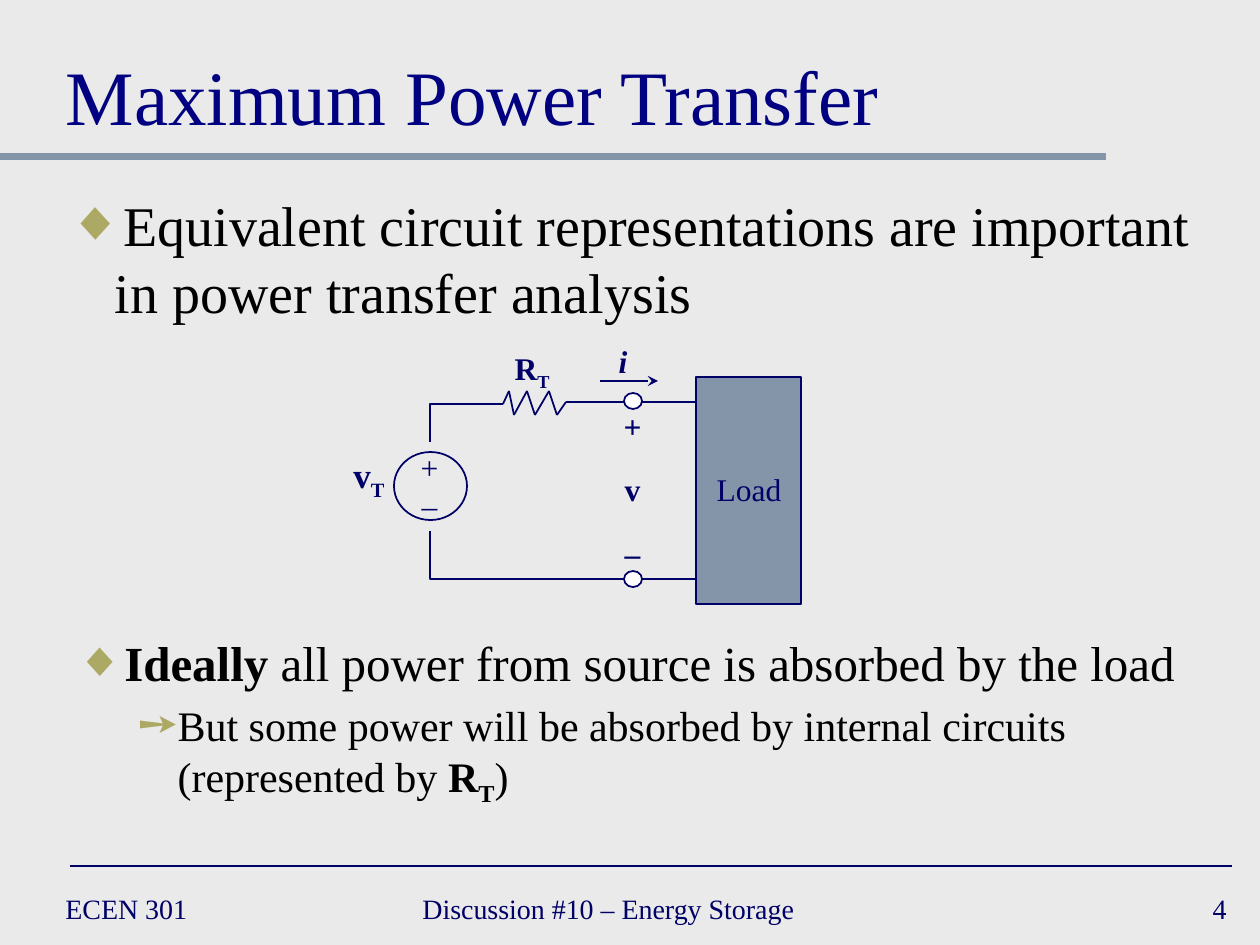
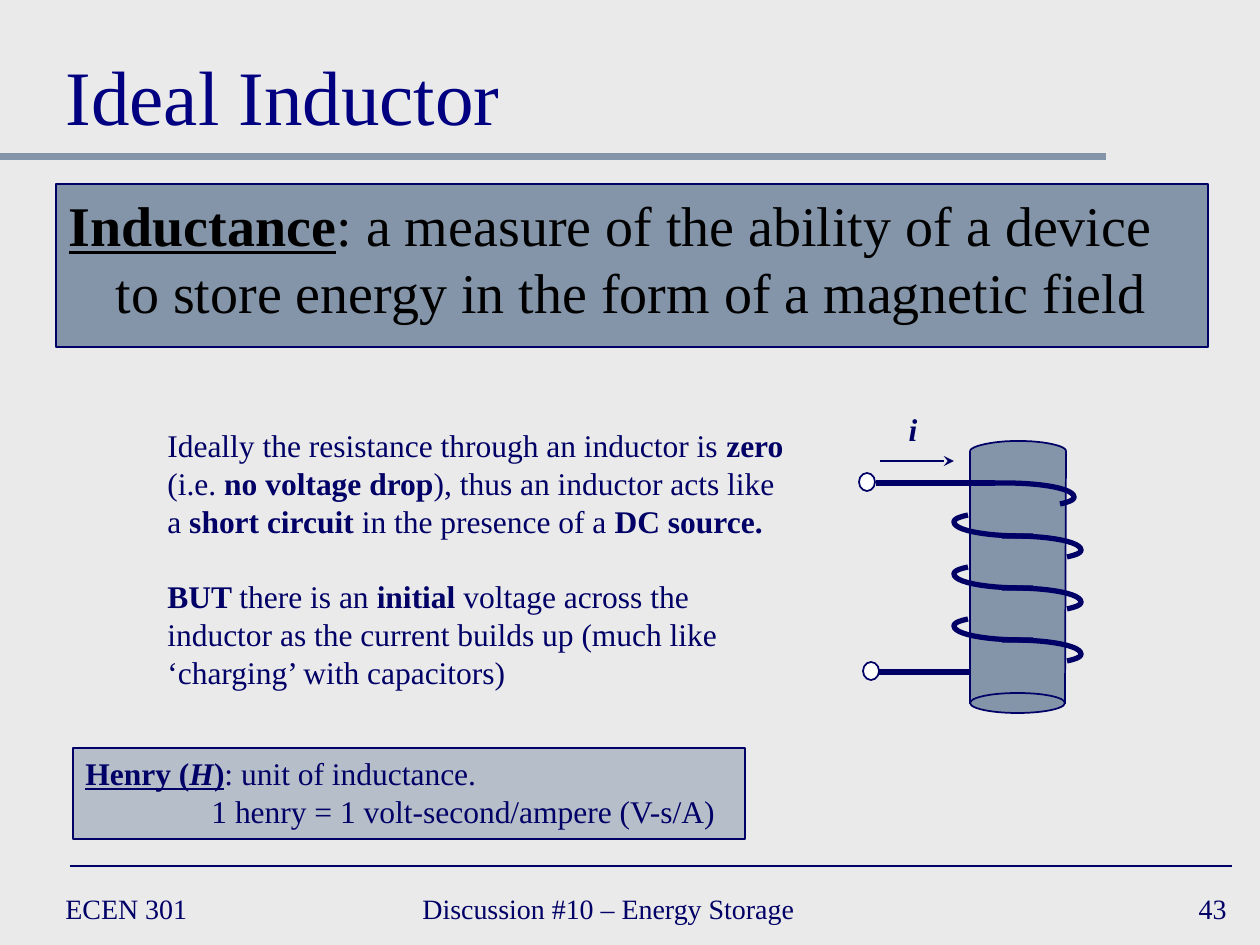
from dataclasses import dataclass
from itertools import pairwise
from typing import NamedTuple

from lxml import etree
from pptx import Presentation
from pptx.dml.color import RGBColor
from pptx.enum.dml import MSO_FILL
from pptx.enum.shapes import MSO_CONNECTOR, MSO_SHAPE
from pptx.enum.text import MSO_ANCHOR, MSO_AUTO_SIZE, PP_ALIGN
from pptx.oxml.ns import qn
from pptx.util import Emu, Pt

LEFT, CENTER, RIGHT = PP_ALIGN.LEFT, PP_ALIGN.CENTER, PP_ALIGN.RIGHT
TOP, MIDDLE, BOTTOM = MSO_ANCHOR.TOP, MSO_ANCHOR.MIDDLE, MSO_ANCHOR.BOTTOM
NO_AUTOFIT = MSO_AUTO_SIZE.NONE
STRAIGHT = MSO_CONNECTOR.STRAIGHT
RECTANGLE, OVAL = MSO_SHAPE.RECTANGLE, MSO_SHAPE.OVAL
SOLID = MSO_FILL.SOLID
EMU_PER_PX = 914400 / 126
CURVE_STEPS = 12

Point = tuple[float, float]


@dataclass(frozen=True)
class Theme:
    font: str = "Times New Roman"
    background: RGBColor = RGBColor(0xEA, 0xEA, 0xEA)
    steel: RGBColor = RGBColor(0x84, 0x95, 0xA9)
    navy: RGBColor = RGBColor(0x00, 0x00, 0x66)
    title: RGBColor = RGBColor(0x00, 0x00, 0x80)
    body: RGBColor = RGBColor(0x00, 0x00, 0x00)
    bullet: RGBColor = RGBColor(0xAC, 0xA9, 0x64)
    white: RGBColor = RGBColor(0xFF, 0xFF, 0xFF)
    title_size: int = 44
    lead_size: int = 32
    point_size: int = 28
    detail_size: int = 24
    source_size: int = 20
    label_size: int = 18
    footer_size: int = 16
    thin: float = 1
    hairline: float = 0.75
    coil: float = 3
    band: float = 4


THEME = Theme()


class Frame(NamedTuple):
    left: int
    top: int
    width: int
    height: int


class Span(NamedTuple):
    text: str
    bold: bool = False
    italic: bool = False
    underline: bool = False
    subscript: bool = False


class Para(NamedTuple):
    spans: list[Span]
    size: int = THEME.label_size
    color: RGBColor = THEME.navy
    align: PP_ALIGN = LEFT
    before: float = 0
    indent: int = 0
    hanging: int = 0
    level: int = 0
    bullet: str = ""


class Footer(NamedTuple):
    frame: Frame
    text: str
    align: PP_ALIGN = LEFT


def px(length: float) -> Emu:
    return Emu(round(length * EMU_PER_PX))


def place(shape, frame: Frame) -> None:
    shape.left, shape.top, shape.width, shape.height = map(px, frame)


def set_bullet(properties, mark: str) -> None:
    if not mark:
        etree.SubElement(properties, qn("a:buNone"))
        return
    color = etree.SubElement(properties, qn("a:buClr"))
    etree.SubElement(color, qn("a:srgbClr"), val=str(THEME.bullet))
    etree.SubElement(properties, qn("a:buFont"), typeface=THEME.font)
    etree.SubElement(properties, qn("a:buChar"), char=mark)


def write(shape, paras: list[Para], wrap: bool = True, anchor: MSO_ANCHOR = TOP) -> None:
    frame = shape.text_frame
    frame.auto_size = NO_AUTOFIT
    frame.word_wrap = wrap
    frame.vertical_anchor = anchor
    for index, para in enumerate(paras):
        paragraph = frame.add_paragraph() if index else frame.paragraphs[0]
        properties = paragraph._p.get_or_add_pPr()
        properties.set("marL", str(px(para.indent)))
        properties.set("indent", str(px(-para.hanging)))
        set_bullet(properties, para.bullet)
        paragraph.level = para.level
        paragraph.alignment = para.align
        paragraph.space_before = Pt(para.before)
        for span in para.spans:
            run = paragraph.add_run()
            run.text = span.text
            run.font.name = THEME.font
            run.font.size = Pt(para.size)
            run.font.color.rgb = para.color
            run.font.bold = span.bold
            run.font.italic = span.italic
            run.font.underline = span.underline
            if span.subscript:
                run._r.get_or_add_rPr().set("baseline", "-25000")


def add_text(page, frame: Frame, paras: list[Para], wrap: bool = True,
             anchor: MSO_ANCHOR = TOP) -> None:
    write(page.shapes.add_textbox(*map(px, frame)), paras, wrap, anchor)


def add_label(page, frame: Frame, *spans: Span, size: int = THEME.label_size) -> None:
    add_text(page, frame, [Para(list(spans), size, align=CENTER)], wrap=False)


def paint(shape, fill: RGBColor | None, line: RGBColor | None,
          width: float = THEME.thin) -> None:
    if fill is None:
        shape.fill.background()
    else:
        shape.fill.solid()
        shape.fill.fore_color.rgb = fill
    if line is None:
        shape.line.fill.background()
    else:
        shape.line.color.rgb = line
        shape.line.width = Pt(width)


def add_solid(page, kind: MSO_SHAPE, frame: Frame, fill: RGBColor | None,
              line: RGBColor | None = THEME.navy):
    shape = page.shapes.add_shape(kind, *map(px, frame))
    shape.shadow.inherit = False
    paint(shape, fill, line)
    return shape


def add_line(page, start: Point, end: Point, color: RGBColor = THEME.navy,
             width: float = THEME.thin, arrow: bool = False) -> None:
    line = page.shapes.add_connector(STRAIGHT, *map(px, (*start, *end)))
    line.line.color.rgb = color
    line.line.width = Pt(width)
    if arrow:
        etree.SubElement(line.line._get_or_add_ln(), qn("a:tailEnd"), type="stealth")
    etree.SubElement(line._element.spPr, qn("a:effectLst"))


def add_path(page, points: list[Point], width: float = THEME.thin) -> None:
    corners = [(px(x), px(y)) for x, y in points]
    builder = page.shapes.build_freeform(*corners[0])
    builder.add_line_segments(corners[1:], close=False)
    shape = builder.convert_to_shape()
    shape.shadow.inherit = False
    paint(shape, None, THEME.navy, width)


def curve(start: Point, first: Point, second: Point, end: Point) -> list[Point]:
    points = []
    for step in range(CURVE_STEPS + 1):
        t = step / CURVE_STEPS
        weights = ((1 - t) ** 3, 3 * t * (1 - t) ** 2, 3 * t * t * (1 - t), t ** 3)
        corners = (start, first, second, end)
        points.append((sum(w * c[0] for w, c in zip(weights, corners)),
                       sum(w * c[1] for w, c in zip(weights, corners))))
    return points


HALF_TURN = [(0, 0), *curve((11, 0), (49, 0), (79, 6), (79, 14)),
             *curve((79, 14), (79, 17), (74, 19), (65, 21))]
RIM = [*curve((970, 451), (971, 446), (993, 441), (1018, 441)),
       *curve((1018, 441), (1045, 441), (1066, 446), (1066, 451))]


def add_half_turn(page, x: int, y: int, direction: int) -> None:
    add_path(page, [(x + direction * dx, y + direction * dy) for dx, dy in HALF_TURN],
             THEME.coil)


def add_page(deck, layout: int, title: str, number: str):
    page = deck.slides.add_slide(deck.slide_layouts[layout])
    add_line(page, (0, 157), (1106, 157), THEME.steel, THEME.band)
    add_line(page, (70, 866), (1232, 866))
    place(page.shapes.title, Frame(53, 21, 1155, 126))
    write(page.shapes.title, [Para([Span(title)], THEME.title_size, THEME.title)],
          anchor=BOTTOM)
    footers = [
        Footer(Frame(53, 882, 273, 53), "ECEN 301"),
        Footer(Frame(410, 882, 483, 53), "Discussion #10 – Energy Storage"),
        Footer(Frame(977, 882, 262, 53), number, RIGHT),
    ]
    for footer in footers:
        para = Para([Span(footer.text)], THEME.footer_size, align=footer.align)
        add_text(page, footer.frame, [para], anchor=MIDDLE)
    return page


def fill_body(page, index: int, frame: Frame, paras: list[Para]):
    body = page.placeholders[index]
    place(body, frame)
    write(body, paras)
    return body


def add_circuit(page) -> None:
    add_label(page, Frame(340, 447, 58, 54), Span("v", True),
              Span("T", True, subscript=True), size=THEME.source_size)
    add_solid(page, OVAL, Frame(394, 452, 73, 68), None)
    add_text(page, Frame(408, 442, 43, 88),
             [Para([Span(sign)], align=CENTER) for sign in "+–"], wrap=False)
    for top in (393, 571):
        add_solid(page, OVAL, Frame(624, top, 18, 16), THEME.white)
    resistor = [(503, 404), (509, 391), (514, 415), (527, 391), (535, 415),
                (549, 391), (557, 415), (566, 402), (624, 402)]
    for start, end in pairwise(resistor):
        add_line(page, start, end)
    add_label(page, Frame(501, 343, 62, 50), Span("R", True),
              Span("T", True, subscript=True))
    add_path(page, [(430, 531), (430, 579), (624, 579)])
    add_path(page, [(430, 442), (430, 404), (503, 404)])
    for y in (402, 579):
        add_line(page, (642, y), (695, y))
    add_solid(page, RECTANGLE, Frame(696, 377, 105, 227), THEME.steel)
    add_label(page, Frame(704, 464, 90, 50), Span("Load"))
    add_text(page, Frame(611, 401, 43, 176),
             [Para([Span(mark, True)], align=CENTER, before=14.5 if index else 0)
              for index, mark in enumerate("+v–")], wrap=False)
    add_line(page, (600, 381), (658, 381), arrow=True)
    add_label(page, Frame(606, 336, 34, 50), Span("i", True, True))


def add_inductor(page) -> None:
    add_solid(page, RECTANGLE, Frame(970, 451, 95, 248), THEME.steel, None)
    add_half_turn(page, 995, 483, 1)
    for turn in range(3):
        y = 536 + 52 * turn
        add_half_turn(page, 1033, y, -1)
        add_half_turn(page, 1002, y, 1)
    add_line(page, (995, 483), (876, 483), width=THEME.coil)
    add_line(page, (970, 672), (876, 672), width=THEME.coil)
    for left, top in ((859, 473), (863, 662)):
        add_solid(page, OVAL, Frame(left, top, 16, 18), THEME.white)
    add_solid(page, OVAL, Frame(970, 693, 95, 20), THEME.steel)
    add_solid(page, OVAL, Frame(971, 441, 95, 20), THEME.steel, None)
    add_path(page, RIM)
    add_line(page, (970, 451), (970, 704))
    add_line(page, (1065, 704), (1066, 451))
    add_line(page, (880, 461), (954, 461), arrow=True)
    add_label(page, Frame(896, 404, 34, 50), Span("i", True, True))


def build_power_transfer(deck) -> None:
    page = add_page(deck, 3, "Maximum Power Transfer", "4")
    fill_body(page, 1, Frame(55, 184, 1152, 174), [
        Para([Span("Equivalent circuit representations are important in power transfer analysis")],
             THEME.lead_size, THEME.body, indent=47, hanging=47, bullet="◆")])
    add_circuit(page)
    fill_body(page, 2, Frame(63, 626, 1152, 174), [
        Para([Span("Ideally", True), Span(" all power from source is absorbed by the load")],
             THEME.point_size, THEME.body, indent=47, hanging=47, bullet="◆"),
        Para([Span("But some power will be absorbed by internal circuits (represented by "),
              Span("R", True), Span("T", True, subscript=True), Span(")")],
             THEME.detail_size, THEME.body, before=5, indent=102, hanging=39,
             level=1, bullet="➙")])


def build_ideal_inductor(deck) -> None:
    page = add_page(deck, 1, "Ideal Inductor", "43")
    definition = fill_body(page, 1, Frame(56, 184, 1152, 163), [
        Para([Span("Inductance", True, underline=True),
              Span(": a measure of the ability of a device to store energy "
                   "in the form of a magnetic field")],
             THEME.lead_size, THEME.body, indent=47, hanging=47)])
    paint(definition, THEME.steel, THEME.navy, THEME.hairline)
    unit = add_solid(page, RECTANGLE, Frame(73, 748, 672, 91), THEME.steel)
    if unit.fill.type == SOLID:
        tint = unit._element.spPr.find(qn("a:solidFill")).find(qn("a:srgbClr"))
        etree.SubElement(tint, qn("a:alpha"), val="50000")
    write(unit, [
        Para([Span("Henry (", True, underline=True), Span("H", True, True, True),
              Span(")", True, underline=True), Span(": unit of inductance.")]),
        Para([Span("1 henry = 1 volt-second/ampere (V-s/A)")], indent=126)])
    add_text(page, Frame(155, 420, 653, 277), [
        Para([Span("Ideally the resistance through an inductor is "), Span("zero", True),
              Span(" (i.e. "), Span("no voltage drop", True),
              Span("), thus an inductor acts like a "), Span("short circuit", True),
              Span(" in the presence of a "), Span("DC source.", True)]),
        Para([Span("BUT ", True), Span("there is an "), Span("initial", True),
              Span(" voltage across the inductor as the current builds up "
                   "(much like ‘charging’ with capacitors)")], before=21.6)])
    add_inductor(page)


def main() -> None:
    deck = Presentation()
    deck.slide_width, deck.slide_height = px(1260), px(945)
    background = deck.slide_master.background.fill
    background.solid()
    background.fore_color.rgb = THEME.background
    build_power_transfer(deck)
    build_ideal_inductor(deck)
    deck.save("out.pptx")


if __name__ == "__main__":
    main()
